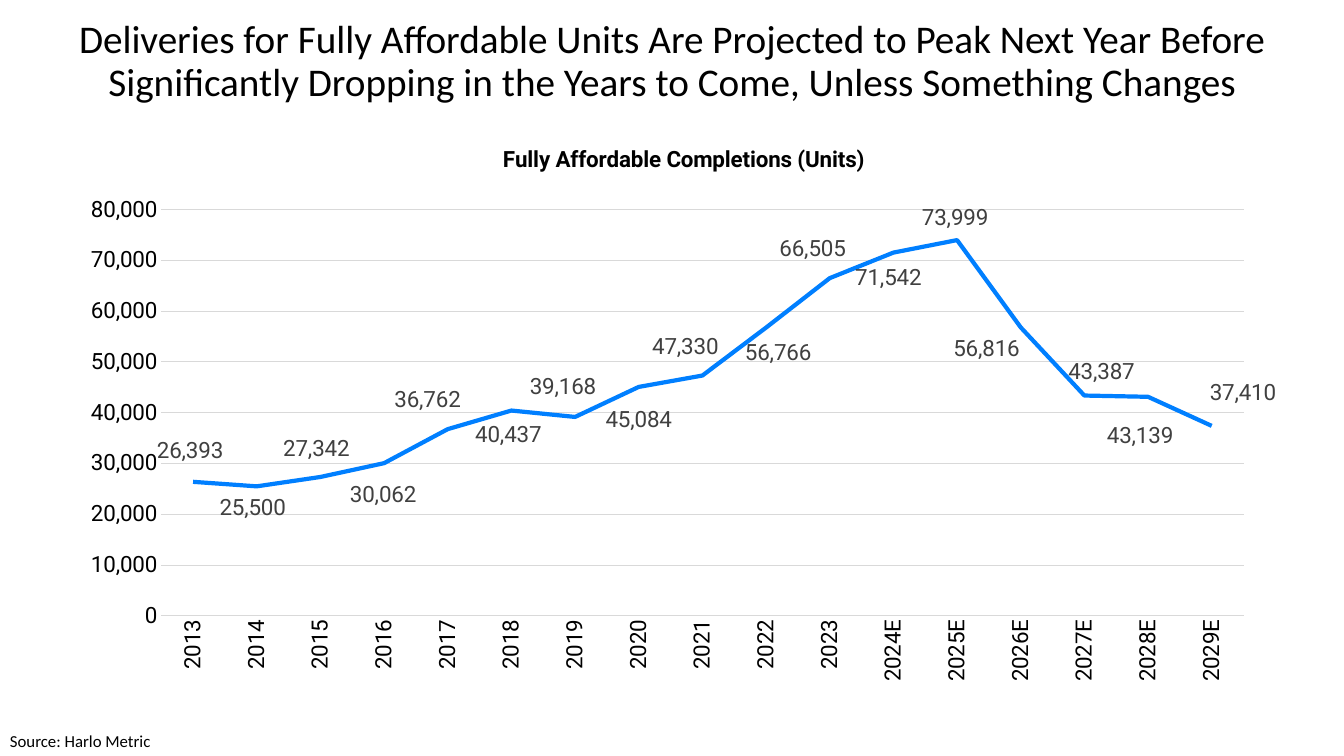
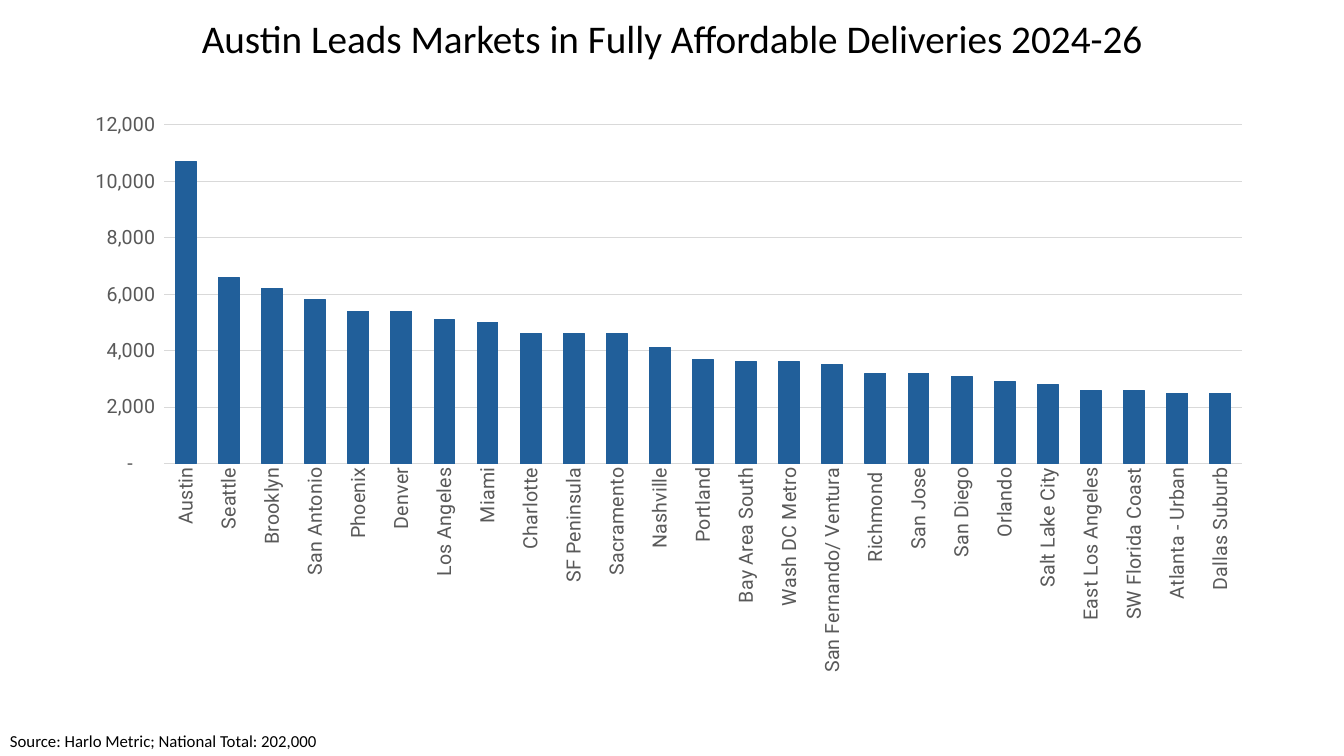
"""Build two slides of charts on fully affordable housing deliveries."""
from dataclasses import dataclass
from typing import NamedTuple

from lxml import etree
from pptx import Presentation
from pptx.chart.data import CategoryChartData
from pptx.dml.color import RGBColor
from pptx.enum.chart import XL_CHART_TYPE, XL_LABEL_POSITION, XL_TICK_MARK
from pptx.enum.text import MSO_AUTO_SIZE, PP_ALIGN
from pptx.oxml.ns import qn
from pptx.util import Inches, Pt

LINE = XL_CHART_TYPE.LINE
COLUMN = XL_CHART_TYPE.COLUMN_CLUSTERED
ABOVE = XL_LABEL_POSITION.ABOVE
BELOW = XL_LABEL_POSITION.BELOW
NO_TICK = XL_TICK_MARK.NONE
LEFT = PP_ALIGN.LEFT
CENTER = PP_ALIGN.CENTER
GROW = MSO_AUTO_SIZE.SHAPE_TO_FIT_TEXT
FIXED = MSO_AUTO_SIZE.NONE

CELL = Inches(0.1)
COLUMNS, ROWS = 133.33, 75
LABEL_GAP = 1.7
WHOLE_NUMBER = "#,##0"
ACCOUNTING = '_(* #,##0_);_(* \\(#,##0\\);_(* "-"??_);_(@_)'


@dataclass(frozen=True)
class Theme:
    """Colours, fonts and type sizes of the presentation."""
    text: str = "000000"
    muted: str = "595959"
    label: str = "404040"
    grid: str = "D9D9D9"
    line: str = "007FFF"
    bar: str = "215F9A"
    text_font: str = "Calibri"
    chart_font: str = "Roboto"
    title_size: float = 28
    source_size: float = 12
    large_size: float = 16
    small_size: float = 14
    thin: float = 0.75
    thick: float = 3


class Box(NamedTuple):
    """A rectangle in grid cells."""
    left: float
    top: float
    width: float
    height: float


class Nudge(NamedTuple):
    """A label's distance from its point in grid cells."""
    across: float
    down: float


@dataclass(frozen=True)
class ChartSpec:
    """A chart with its frame, plot area, data and look."""
    kind: int
    frame: Box
    plot: Box
    values: dict[str, int]
    colour: str
    weight: float
    axis_colour: str
    size: float
    top_value: int
    step: int
    number_format: str
    title: str = ""
    nudges: tuple[Nudge, ...] = ()


@dataclass(frozen=True)
class SlideSpec:
    """A slide with its title, source and chart."""
    title: str
    source: str
    chart: ChartSpec


THEME = Theme()
TITLE_BOX = Box(0, 1.5, COLUMNS, 5.9)
SOURCE_BOX = Box(0, 72, 116.8, 3)
HEADING_CORNER = (49.5, 14)

COMPLETIONS = {
    "2013": 26393, "2014": 25500, "2015": 27342, "2016": 30062, "2017": 36762,
    "2018": 40437, "2019": 39168, "2020": 45084, "2021": 47330, "2022": 56766,
    "2023": 66505, "2024E": 71542, "2025E": 73999, "2026E": 56816,
    "2027E": 43387, "2028E": 43139, "2029E": 37410,
}
NUDGES = tuple(Nudge(*pair) for pair in (
    (-0.3, -3.1), (-0.4, 2.2), (-0.4, -2.8), (-0.1, 3.2), (-2, -2.9),
    (-0.3, 2.5), (-1.2, -3), (0, 3.4), (-1.7, -2.9), (1.2, 2.6),
    (-1.7, -2.9), (-0.5, 2.6), (-0.2, -2.2), (-3.4, 2.2), (1.7, -2.4),
    (-0.8, 4), (3.1, -3.3),
))
MARKETS = {
    "Austin": 10700, "Seattle": 6600, "Brooklyn": 6200, "San Antonio": 5800,
    "Phoenix": 5400, "Denver": 5400, "Los Angeles": 5100, "Miami": 5000,
    "Charlotte": 4600, "SF Peninsula": 4600, "Sacramento": 4600,
    "Nashville": 4100, "Portland": 3700, "Bay Area South": 3600,
    "Wash DC Metro": 3600, "San Fernando/ Ventura": 3500, "Richmond ": 3200,
    "San Jose": 3200, "San Diego": 3100, "Orlando": 2900,
    "Salt Lake City": 2800, "East Los Angeles": 2600,
    "SW Florida Coast": 2600, "Atlanta - Urban": 2500, "Dallas Suburb": 2500,
}
SLIDES = (
    SlideSpec(
        "Deliveries for Fully Affordable Units Are Projected to Peak Next Year Before "
        "Significantly Dropping in the Years to Come, Unless Something Changes",
        "Source: Harlo Metric",
        ChartSpec(LINE, Box(6.7, 13.4, 119.9, 55.4), Box(16, 20.8, 107.4, 40.3),
                  COMPLETIONS, THEME.line, THEME.thick, THEME.text,
                  THEME.large_size, 80000, 10000, WHOLE_NUMBER,
                  "Fully Affordable Completions (Units)", NUDGES),
    ),
    SlideSpec(
        "Austin Leads Markets in Fully Affordable Deliveries 2024-26",
        "Source: Harlo Metric; National Total: 202,000",
        ChartSpec(COLUMN, Box(6.6, 10.1, 119, 57.8), Box(16.3, 12.4, 106.9, 33.6),
                  MARKETS, THEME.bar, THEME.thin, THEME.muted,
                  THEME.small_size, 12000, 2000, ACCOUNTING),
    ),
)


def cells(box: Box) -> list[int]:
    """Convert a box from grid cells to slide units."""
    return [round(length * CELL) for length in box]


def style_font(font, size: float, colour: str, name: str, bold: bool = False) -> None:
    """Set the look of a font."""
    font.size, font.name, font.bold = Pt(size), name, bold
    font.color.rgb = RGBColor.from_string(colour)


def style_line(line, colour: str, weight: float) -> None:
    """Set the colour and weight of a line."""
    line.color.rgb = RGBColor.from_string(colour)
    line.width = Pt(weight)


def add_text(slide, text: str, box: Box, *, size: float, align: int = LEFT,
             spacing: float = 1.0, auto_size: int = FIXED) -> None:
    """Add a wrapped text box."""
    frame = slide.shapes.add_textbox(*cells(box)).text_frame
    frame.word_wrap = True
    frame.auto_size = auto_size
    paragraph = frame.paragraphs[0]
    paragraph.alignment, paragraph.line_spacing = align, spacing
    run = paragraph.add_run()
    run.text = text
    style_font(run.font, size, THEME.text, THEME.text_font)


def set_layout(parent, index: int, **values: str | float) -> None:
    """Give a chart part a manual layout."""
    for old in parent.findall(qn("c:layout")):
        parent.remove(old)
    layout = etree.Element(qn("c:layout"))
    manual = etree.SubElement(layout, qn("c:manualLayout"))
    for name, value in values.items():
        etree.SubElement(manual, qn(f"c:{name}")).set("val", str(value))
    parent.insert(index, layout)


def style_axes(chart, spec: ChartSpec) -> None:
    """Format both axes and the gridlines."""
    for axis in (chart.category_axis, chart.value_axis):
        axis.major_tick_mark = axis.minor_tick_mark = NO_TICK
        style_font(axis.tick_labels.font, spec.size, spec.axis_colour, THEME.chart_font)
    names, values = chart.category_axis, chart.value_axis
    style_line(names.format.line, THEME.grid, THEME.thin)
    names_body = names._element.find(f"{qn('c:txPr')}/{qn('a:bodyPr')}")
    names_body.set("rot", "-5400000")
    names_body.set("vert", "horz")
    values.format.line.fill.background()
    values.minimum_scale, values.maximum_scale = 0, spec.top_value
    values.major_unit = spec.step
    values.has_major_gridlines = True
    style_line(values.major_gridlines.format.line, THEME.grid, THEME.thin)
    values.tick_labels.number_format = spec.number_format
    values.tick_labels.number_format_is_linked = False


def add_labels(series, spec: ChartSpec) -> None:
    """Label each point at its own distance."""
    for index, nudge in enumerate(spec.nudges):
        label = series.points[index].data_label
        style_font(label.font, spec.size, THEME.label, THEME.chart_font)
        label.position = ABOVE if nudge.down < 0 else BELOW
        gap = -LABEL_GAP if nudge.down < 0 else LABEL_GAP
        element = series._element.findall(f".//{qn('c:dLbl')}")[index]
        set_layout(element, 1, x=nudge.across / spec.frame.width,
                   y=(nudge.down - gap) / spec.frame.height)
    for leader in series._element.iter(qn("c:showLeaderLines")):
        leader.set("val", "0")


def add_heading(chart, spec: ChartSpec) -> None:
    """Add the chart's own title, if it has one."""
    chart.has_title = bool(spec.title)
    if not spec.title:
        return
    run = chart.chart_title.text_frame.paragraphs[0].add_run()
    run.text = spec.title
    style_font(run.font, spec.size, THEME.text, THEME.chart_font, bold=True)
    left, top = HEADING_CORNER
    set_layout(chart.chart_title._element, 1, xMode="edge", yMode="edge",
               x=(left - spec.frame.left) / spec.frame.width,
               y=(top - spec.frame.top) / spec.frame.height)


def add_data_chart(slide, spec: ChartSpec) -> None:
    """Add a line or column chart."""
    data = CategoryChartData(number_format=WHOLE_NUMBER)
    data.categories = list(spec.values)
    data.add_series("Series 1", list(spec.values.values()))
    chart = slide.shapes.add_chart(spec.kind, *cells(spec.frame), data).chart
    style_font(chart.font, spec.size, THEME.text, THEME.chart_font)
    chart.has_legend = False
    add_heading(chart, spec)
    style_axes(chart, spec)
    plot = chart.plots[0]
    plot.vary_by_categories = False
    series = plot.series[0]
    style_line(series.format.line, spec.colour, spec.weight)
    if spec.kind == LINE:
        series.smooth = False
        add_labels(series, spec)
    else:
        plot.gap_width, plot.overlap = 107, -27
        series.format.fill.solid()
        series.format.fill.fore_color.rgb = RGBColor.from_string(spec.colour)
    frame, area = spec.frame, spec.plot
    set_layout(chart._chartSpace.find(f".//{qn('c:plotArea')}"), 0,
               layoutTarget="inner", xMode="edge", yMode="edge",
               x=(area.left - frame.left) / frame.width,
               y=(area.top - frame.top) / frame.height,
               w=area.width / frame.width, h=area.height / frame.height)


def main() -> None:
    """Build and save the presentation."""
    presentation = Presentation()
    presentation.slide_width = round(COLUMNS * CELL)
    presentation.slide_height = ROWS * CELL
    blank = presentation.slide_layouts[6]
    for spec in SLIDES:
        slide = presentation.slides.add_slide(blank)
        add_data_chart(slide, spec.chart)
        add_text(slide, spec.title, TITLE_BOX, size=THEME.title_size,
                 align=CENTER, spacing=0.9)
        add_text(slide, spec.source, SOURCE_BOX, size=THEME.source_size,
                 auto_size=GROW)
    presentation.save("out.pptx")


if __name__ == "__main__":
    main()
